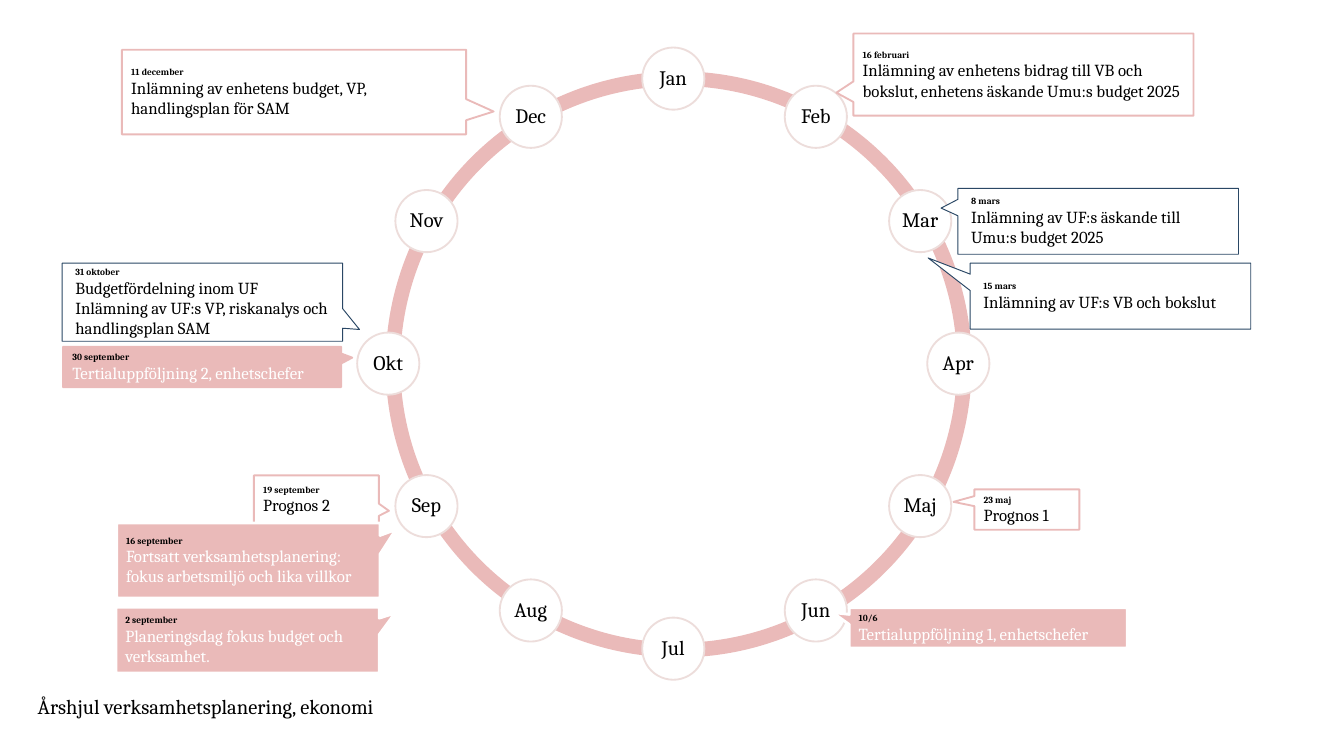
from math import cos, pi, sin

from pptx import Presentation
from pptx.dml.color import RGBColor
from pptx.enum import shapes, text
from pptx.util import Pt

FONT = "Cambria"
PINK, PALE, NAVY = "EABAB9", "EDDDDB", "2A4765"
WHITE, BLACK = "FFFFFF", "000000"

MONTHS = ["Jan", "Feb", "Mar", "Apr", "Maj", "Jun",
          "Jul", "Aug", "Sep", "Okt", "Nov", "Dec"]
MID_X, MID_Y, RADIUS, DOT = 360.7, 194.8, 152.7, 33.3

# Callout styles: fill, line, line width, text colour, side and top insets
STYLES = {
    "pink": (WHITE, PINK, 1, BLACK, 5, 2.5),
    "solid": (PINK, WHITE, 1.5, WHITE, 5, 2.5),
    "flat": (PINK, PINK, 1, WHITE, 5, 2.5),
    "navy": (WHITE, NAVY, 0.5, BLACK, 7.2, 3.6),
}

# Style, box, pointer tip, date, lines; from back to front
NOTES = [
    ("pink", (457.2, 18, 182.2, 44), (-0.55, 0.22), "16 februari",
     ["Inlämning av enhetens bidrag till VB och bokslut, "
      "enhetens äskande Umu:s budget 2025"]),
    ("pink", (522, 262.2, 56.2, 21.6), (-0.7, -0.19), "23 maj",
     ["Prognos 1"]),
    ("solid", (455, 325.6, 149, 21.6), (-0.56, -0.38), "10/6",
     ["Tertialuppföljning 1, enhetschefer"]),
    ("pink", (65.3, 26.7, 184.4, 45.3), (0.58, 0.23), "11 december",
     ["Inlämning av enhetens budget, VP, handlingsplan för SAM"]),
    ("pink", (136, 254.7, 67, 26), (0.58, 0.23), "19 september",
     ["Prognos 2"]),
    ("solid", (62.6, 280.2, 141, 40.2), (0.56, -0.41), "16 september",
     ["Fortsatt verksamhetsplanering:",
      "fokus arbetsmiljö och lika villkor"]),
    ("flat", (33.8, 185.8, 149, 21.6), (0.54, -0.23), "30 september",
     ["Tertialuppföljning 2, enhetschefer"]),
    ("navy", (519.8, 141, 150.3, 35.3), (-0.65, -0.58), "15 mars",
     ["Inlämning av UF:s VB och bokslut"]),
    ("navy", (33.3, 141, 150.3, 41.8), (0.56, 0.35), "31 oktober",
     ["Budgetfördelning inom UF",
      "Inlämning av UF:s VP, riskanalys och handlingsplan SAM"]),
    ("solid", (62.2, 325.3, 141, 35.3), (0.56, -0.41), "2 september",
     ["Planeringsdag fokus budget och verksamhet."]),
    ("navy", (513.2, 100.9, 150.3, 35.3), (-0.56, -0.2), "8 mars",
     ["Inlämning av UF:s äskande till Umu:s budget 2025"]),
]


def paint(fmt, color):
    """Set a solid colour on a fill."""
    fmt.solid()
    fmt.fore_color.rgb = RGBColor.from_string(color)


def add_run(para, words, size, color=BLACK, bold=False):
    run = para.add_run()
    run.text = words
    run.font.name = FONT
    run.font.size = Pt(size)
    run.font.bold = bold
    paint(run.font.fill, color)


def add_form(slide, kind, box, fill, line=None, width=1):
    form = slide.shapes.add_shape(kind, *map(Pt, box))
    form.shadow.inherit = False
    paint(form.fill, fill)
    if line:
        paint(form.line.fill, line)
        form.line.width = Pt(width)
    else:
        form.line.fill.background()
    return form


def set_frame(frame, side, top, anchor=text.MSO_ANCHOR.MIDDLE):
    frame.word_wrap = True
    frame.auto_size = text.MSO_AUTO_SIZE.NONE
    frame.vertical_anchor = anchor
    frame.margin_left = frame.margin_right = Pt(side)
    frame.margin_top = frame.margin_bottom = Pt(top)


def add_month(slide, index, name):
    angle = index * 2 * pi / len(MONTHS)
    left = MID_X + RADIUS * sin(angle) - DOT / 2
    top = MID_Y - RADIUS * cos(angle) - DOT / 2
    dot = add_form(slide, shapes.MSO_SHAPE.OVAL, (left, top, DOT, DOT),
                   WHITE, PALE)
    set_frame(dot.text_frame, 0, 0)
    para = dot.text_frame.paragraphs[0]
    para.alignment = text.PP_ALIGN.CENTER
    para.line_spacing = 0.9
    add_run(para, name, 11)


def add_note(slide, style, box, tip, date, lines):
    fill, line, width, color, side, top = STYLES[style]
    note = add_form(slide, shapes.MSO_SHAPE.RECTANGULAR_CALLOUT, box,
                    fill, line, width)
    note.adjustments[0], note.adjustments[1] = tip
    frame = note.text_frame
    set_frame(frame, side, top)
    add_run(frame.paragraphs[0], date, 5, bold=True)
    for words in lines:
        add_run(frame.add_paragraph(), words, 9, color)
    for para in frame.paragraphs:
        para.alignment = text.PP_ALIGN.LEFT


def add_title(slide, words):
    title = slide.shapes.title
    title.left, title.top = Pt(13), Pt(368)
    title.width, title.height = Pt(211), Pt(21)
    set_frame(title.text_frame, 7.2, 3.6, text.MSO_ANCHOR.TOP)
    para = title.text_frame.paragraphs[0]
    para.alignment = text.PP_ALIGN.LEFT
    add_run(para, words, 11)


def main():
    prs = Presentation()
    prs.slide_width, prs.slide_height = Pt(720), Pt(405)
    slide = prs.slides.add_slide(prs.slide_layouts[5])
    add_title(slide, "Årshjul verksamhetsplanering, ekonomi")

    # Year wheel
    ring = add_form(slide, shapes.MSO_SHAPE.DONUT, (206.6, 38.2, 314, 314),
                    PINK)
    ring.adjustments[0] = 0.025
    for index, name in enumerate(MONTHS):
        add_month(slide, index, name)

    # Dated callouts
    for note in NOTES:
        add_note(slide, *note)
    prs.save("out.pptx")


if __name__ == "__main__":
    main()
